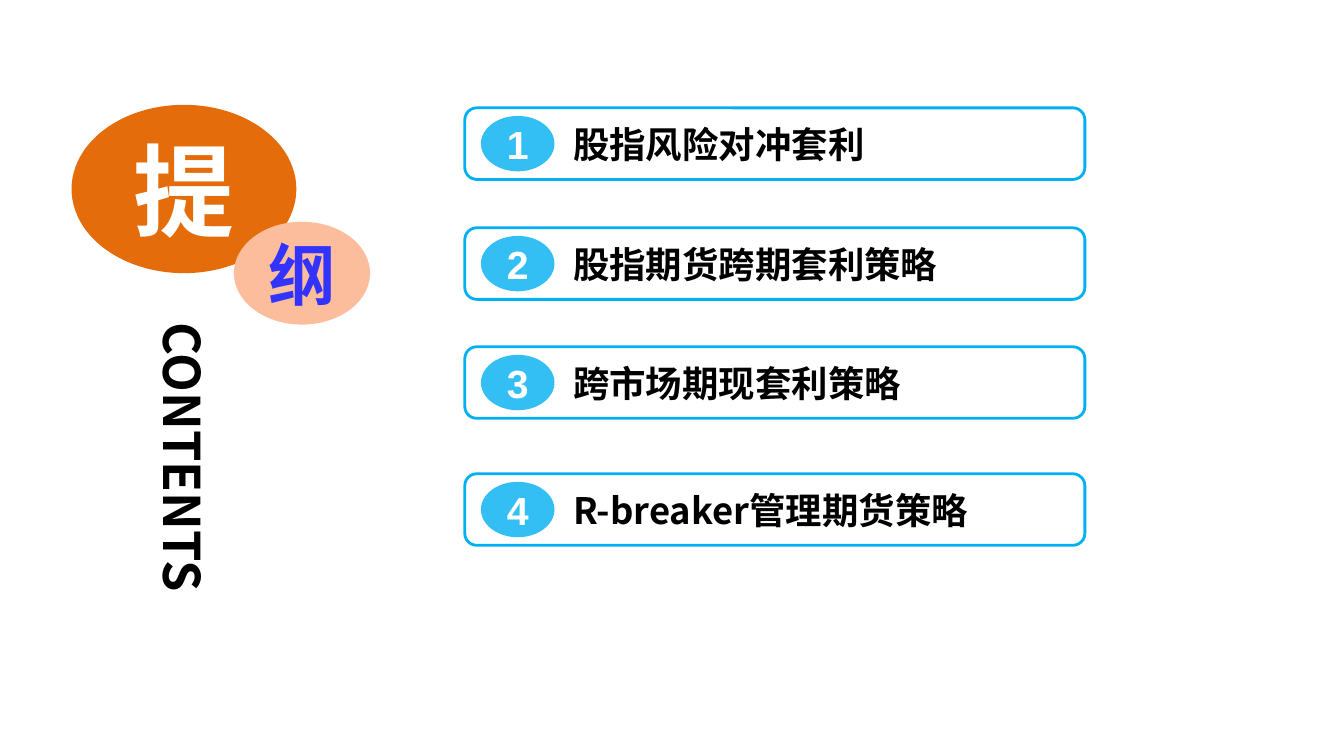
from lxml import etree
from pptx import Presentation
from pptx.dml.color import RGBColor
from pptx.enum.shapes import MSO_SHAPE
from pptx.enum.text import MSO_ANCHOR, PP_ALIGN
from pptx.oxml.ns import qn
from pptx.util import Inches, Pt

COLORS = {
    "white": "FFFFFF",
    "black": "000000",
    "blue": "00B0F0",
    "orange": "E46C0A",
    "peach": "FBBD9B",
    "indigo": "3333FF",
}
CHINESE_FONT = "Noto Sans CJK SC"
TOPICS = [
    (1.07, "股指风险对冲套利"),
    (2.26, "股指期货跨期套利策略"),
    (3.44, "跨市场期现套利策略"),
    (4.7, "R-breaker管理期货策略"),
]


def color(name):
    return RGBColor.from_string(COLORS[name])


def add_filled_shape(slide, kind, box, fill):
    shape = slide.shapes.add_shape(kind, *(Inches(length) for length in box))
    shape.shadow.inherit = False
    shape.fill.solid()
    shape.fill.fore_color.rgb = color(fill)
    shape.line.fill.background()
    return shape


def write_text(shape, text, size, text_color, font=CHINESE_FONT,
               align=PP_ALIGN.CENTER, left_margin=0, wrap=True):
    """Put one bold run in the shape, centred vertically."""
    frame = shape.text_frame
    frame.word_wrap = wrap
    frame.vertical_anchor = MSO_ANCHOR.MIDDLE
    frame.margin_left = Inches(left_margin)
    frame.margin_right = frame.margin_top = frame.margin_bottom = 0
    paragraph = frame.paragraphs[0]
    paragraph.alignment = align
    run = paragraph.add_run()
    run.text = text
    run.font.name = font
    run.font.size = Pt(size)
    run.font.bold = True
    run.font.color.rgb = color(text_color)
    latin = run.font._element.find(qn("a:latin"))
    east_asian = etree.Element(qn("a:ea"), typeface=font)
    latin.addnext(east_asian)


def set_opacity(shape, percent):
    fill_color = shape.fill._xPr.find(qn("a:solidFill"))[0]
    etree.SubElement(fill_color, qn("a:alpha"), val=str(percent * 1000))


def add_title(slide, left, top):
    """Two overlapping ovals above a vertical caption."""
    large = add_filled_shape(slide, MSO_SHAPE.OVAL, (left, top, 2.23, 1.67), "orange")
    write_text(large, "提", 72, "white")
    small = add_filled_shape(
        slide, MSO_SHAPE.OVAL, (left + 1.61, top + 1.16, 1.35, 1.02), "peach")
    write_text(small, "纲", 48, "indigo")
    caption = slide.shapes.add_textbox(
        Inches(left + 0.67), Inches(top + 2.16), Inches(0.89), Inches(3))
    write_text(caption, "CONTENTS", 36, "black", align=PP_ALIGN.LEFT)
    caption.text_frame._txBody.bodyPr.set("vert", "eaVert")


def add_topic(slide, left, top, number, topic):
    """A framed topic with its number in an oval."""
    frame = add_filled_shape(
        slide, MSO_SHAPE.ROUNDED_RECTANGLE, (left, top, 6.15, 0.71), "white")
    frame.line.color.rgb = color("blue")
    frame.line.width = Pt(2)
    write_text(frame, topic, 26, "black", align=PP_ALIGN.LEFT, left_margin=1.04)
    badge = add_filled_shape(
        slide, MSO_SHAPE.OVAL, (left + 0.16, top + 0.08, 0.73, 0.55), "blue")
    set_opacity(badge, 80)
    write_text(badge, str(number), 28, "white", font="Arial", wrap=False)


def main():
    presentation = Presentation()
    presentation.slide_width = Inches(13.33)
    presentation.slide_height = Inches(7.5)
    slide = presentation.slides.add_slide(presentation.slide_layouts[6])
    add_title(slide, 0.71, 1.04)
    for number, (top, topic) in enumerate(TOPICS, start=1):
        add_topic(slide, 4.61, top, number, topic)
    presentation.save("out.pptx")


if __name__ == "__main__":
    main()
